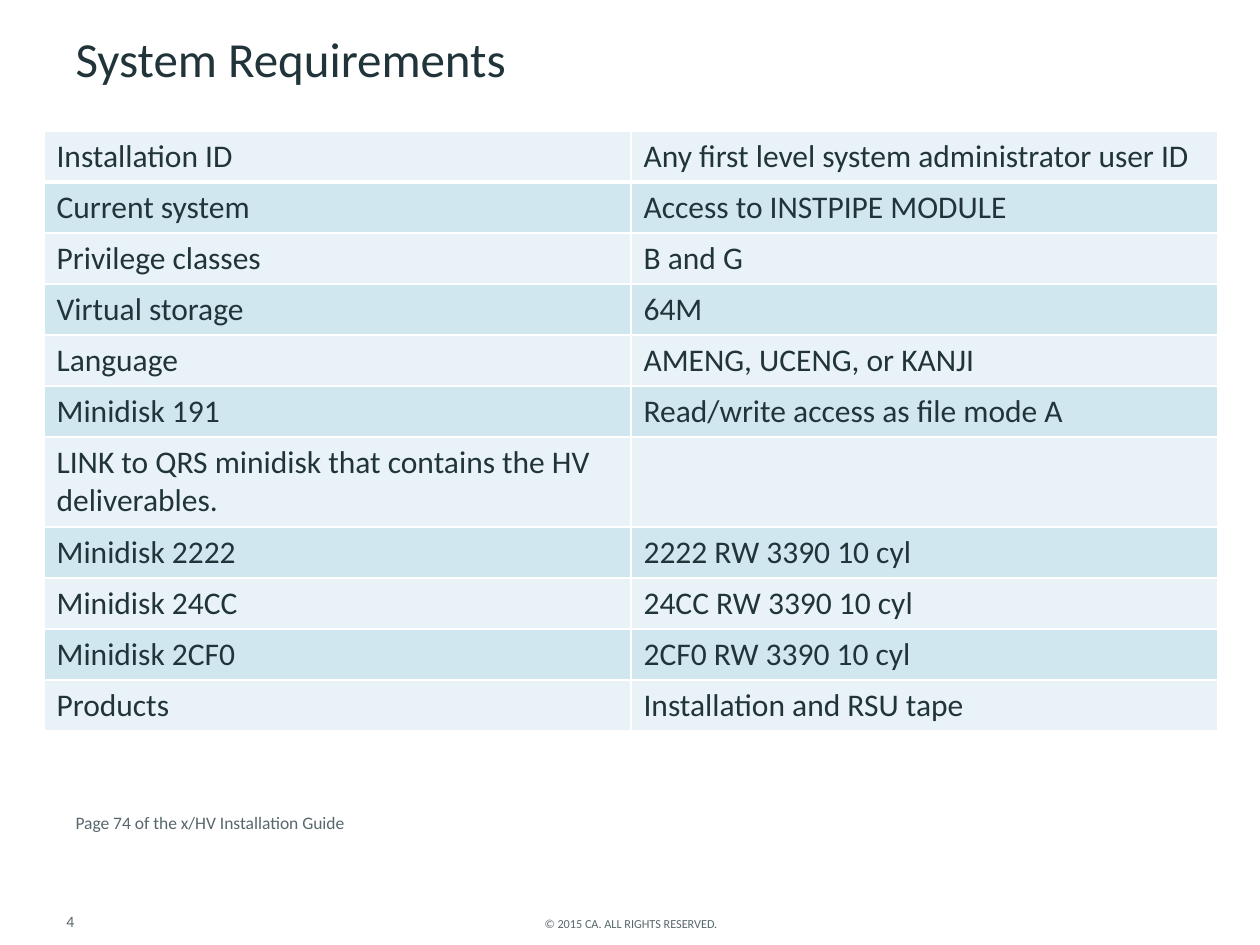
from lxml import etree
from pptx import Presentation
from pptx.dml.color import RGBColor
from pptx.enum.text import MSO_ANCHOR, MSO_AUTO_SIZE, PP_ALIGN
from pptx.oxml.ns import qn
from pptx.util import Pt

PX = 914400 / 126
LEFT, CENTER = PP_ALIGN.LEFT, PP_ALIGN.CENTER
TOP, BOTTOM = MSO_ANCHOR.TOP, MSO_ANCHOR.BOTTOM
NO_AUTOFIT = MSO_AUTO_SIZE.NONE
INK, GREY = "20343A", "58676D"
BANDS = ["E9F3F7", "D1E7EF"]
ROW_HEIGHT, TALL_ROW_HEIGHT = 51, 90


def color(value):
    return RGBColor.from_string(value)


def write(frame, text, size, ink, align=LEFT, anchor=TOP):
    frame.text = text
    frame.word_wrap = True
    frame.vertical_anchor = anchor
    paragraph = frame.paragraphs[0]
    paragraph.alignment = align
    paragraph.space_before = Pt(0)
    for run in paragraph.runs:
        run.font.name = "Calibri"
        run.font.size = Pt(size)
        run.font.color.rgb = color(ink)
    return paragraph


requirements = [
    ("Installation ID", "Any first level system administrator user ID"),
    ("Current system", "Access to INSTPIPE MODULE"),
    ("Privilege classes", "B and G"),
    ("Virtual storage", "64M"),
    ("Language", "AMENG, UCENG, or KANJI"),
    ("Minidisk 191", "Read/write access as file mode A"),
    ("LINK to QRS minidisk that contains the HV deliverables.", ""),
    ("Minidisk 2222", "2222 RW 3390 10 cyl"),
    ("Minidisk 24CC", "24CC RW 3390 10 cyl"),
    ("Minidisk 2CF0", "2CF0 RW 3390 10 cyl"),
    ("Products", "Installation and RSU tape"),
]

prs = Presentation()
prs.slide_width, prs.slide_height = round(1260 * PX), round(945 * PX)
slide = prs.slides.add_slide(prs.slide_layouts[1])

title, reference = slide.placeholders
for holder, box in ((title, (63, 29, 1134, 67)), (reference, (63, 806, 1133, 34))):
    holder.left, holder.top, holder.width, holder.height = [round(v * PX) for v in box]
    holder.text_frame.auto_size = NO_AUTOFIT

write(title.text_frame, "System Requirements", 28, INK).line_spacing = 0.9

source = write(reference.text_frame, "Page 74 of the x/HV Installation Guide", 10, GREY)
source.space_after = Pt(2)
props = source._p.get_or_add_pPr()
props.set("marL", "0")
props.set("indent", "0")
etree.SubElement(props, qn("a:buNone"))

for text, size, align, box in (
    ("4", 9, LEFT, (54, 891, 73, 46)),
    ("© 2015 CA. ALL RIGHTS RESERVED.", 7, CENTER, (173, 891, 916, 46)),
):
    footer = slide.shapes.add_textbox(*[round(v * PX) for v in box])
    write(footer.text_frame, text, size, GREY, align, BOTTOM)

table_box = [round(v * PX) for v in (44, 131, 1174, 600)]
table = slide.shapes.add_table(len(requirements), 2, *table_box).table
table.first_row = False
table.horz_banding = False
for column in table.columns:
    column.width = round(587 * PX)

for r, entries in enumerate(requirements):
    height = ROW_HEIGHT if all(entries) else TALL_ROW_HEIGHT
    table.rows[r].height = round(height * PX)
    for c, entry in enumerate(entries):
        cell = table.cell(r, c)
        write(cell.text_frame, entry, 18, INK)
        for side in ("L", "R", "T", "B"):
            below_first = (r, side) in ((0, "B"), (1, "T"))
            line = etree.SubElement(cell._tc.get_or_add_tcPr(), qn(f"a:ln{side}"))
            line.set("w", str(Pt(3 if below_first else 1)))
            fill = etree.SubElement(line, qn("a:solidFill"))
            etree.SubElement(fill, qn("a:srgbClr")).set("val", "FFFFFF")
        cell.fill.solid()
        cell.fill.fore_color.rgb = color(BANDS[r % 2])

prs.save("out.pptx")
